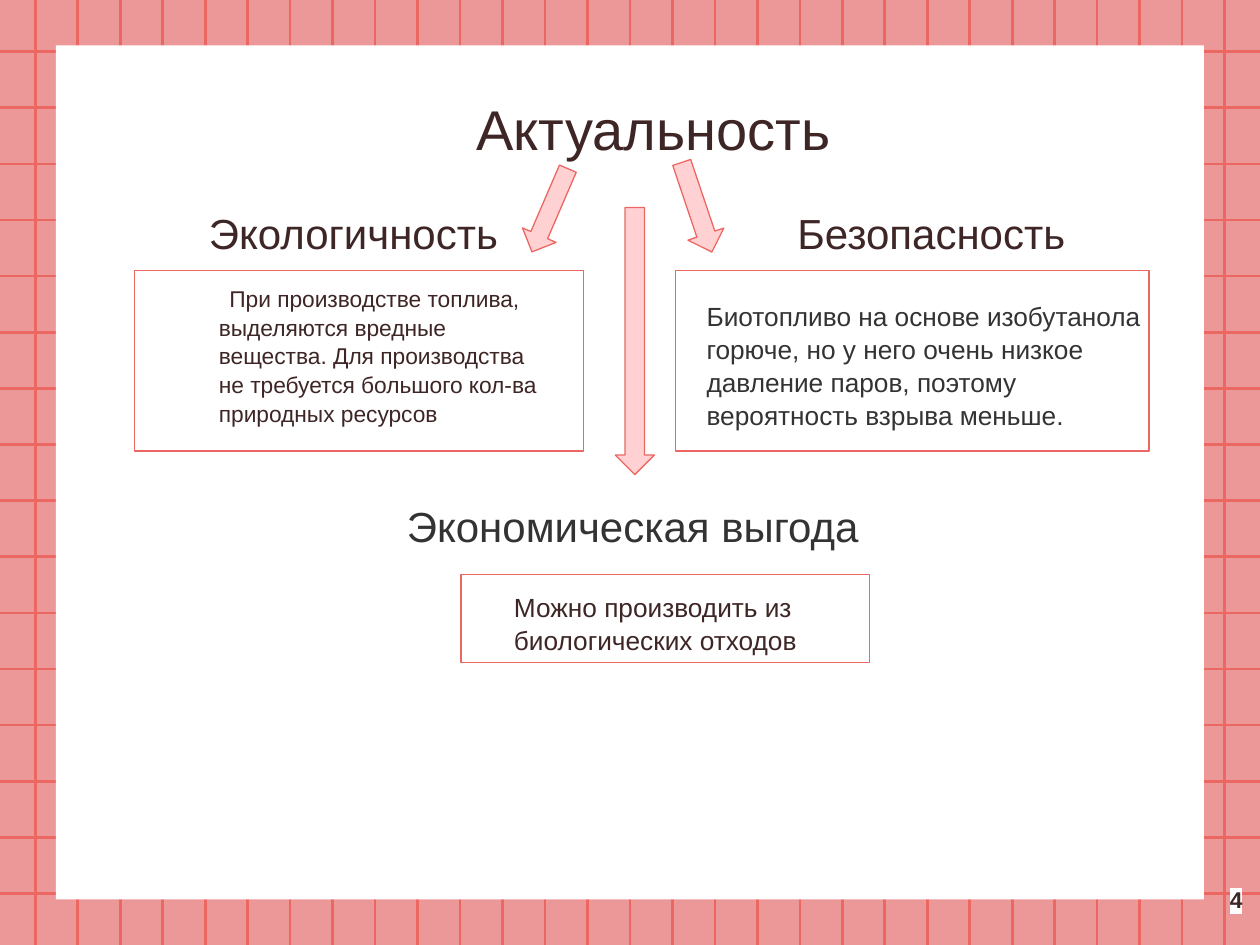
from pptx import Presentation
from pptx.dml.color import RGBColor
from pptx.enum import shapes, text
from pptx.oxml import parse_xml
from pptx.oxml.ns import nsdecls
from pptx.util import Pt

WIDTH, HEIGHT = 720, 540
FONT = "Arial"
COLORS = {
    "background": "ED9898",
    "accent": "EC6762",
    "panel": "FFFFFF",
    "arrow": "FFD1D3",
    "brown": "3E2626",
    "gray": "333333",
}
GRID_ROWS, ROW_START, ROW_STEP = 16, 29.5, 32.07
GRID_COLUMNS, COLUMN_START, COLUMN_STEP = 29, 20.2, 24.27
KIND = shapes.MSO_SHAPE
ALIGN = text.PP_ALIGN
BOTTOM = text.MSO_ANCHOR.BOTTOM


def color(name):
    return RGBColor.from_string(COLORS[name])


def add_grid_line(slide, x1, y1, x2, y2):
    line = slide.shapes.add_connector(
        shapes.MSO_CONNECTOR.STRAIGHT, Pt(x1), Pt(y1), Pt(x2), Pt(y2))
    line.line.color.rgb = color("accent")
    line.line.width = Pt(1.5)
    line._element.spPr.append(parse_xml(f"<a:effectLst {nsdecls('a')}/>"))


def add_grid(slide):
    for row in range(GRID_ROWS):
        y = ROW_START + row * ROW_STEP
        add_grid_line(slide, 0, y, WIDTH, y)
    for column in range(GRID_COLUMNS):
        x = COLUMN_START + column * COLUMN_STEP
        add_grid_line(slide, x, 0, x, HEIGHT)


def add_figure(slide, kind, box, fill=None, outline="accent", rotation=0):
    figure = slide.shapes.add_shape(kind, *map(Pt, box))
    figure.shadow.inherit = False
    figure.rotation = rotation
    if fill:
        figure.fill.solid()
        figure.fill.fore_color.rgb = color(fill)
    else:
        figure.fill.background()
    if outline:
        figure.line.color.rgb = color(outline)
        figure.line.width = Pt(0.75)
    else:
        figure.line.fill.background()


def add_text(slide, box, wording, size, ink="brown", align=ALIGN.LEFT,
             anchor=text.MSO_ANCHOR.TOP, spacing=1.0, margin=0, indent=0,
             bold=False, highlight=None):
    """Margin is the left paragraph margin, indent that of its first line."""
    frame = slide.shapes.add_textbox(*map(Pt, box)).text_frame
    frame.word_wrap = True
    frame.vertical_anchor = anchor
    frame.margin_left = frame.margin_right = Pt(7.2)
    frame.margin_top = frame.margin_bottom = Pt(7.2)
    paragraph = frame.paragraphs[0]
    paragraph.alignment = align
    paragraph.line_spacing = spacing
    if margin or indent:
        properties = paragraph._p.get_or_add_pPr()
        properties.set("marL", str(Pt(margin)))
        properties.set("indent", str(Pt(indent)))
    run = paragraph.add_run()
    run.text = wording
    run.font.name = FONT
    run.font.size = Pt(size)
    run.font.bold = bold
    run.font.color.rgb = color(ink)
    if highlight:
        ink_fill = run._r.rPr.find("{*}solidFill")
        ink_fill.addnext(parse_xml(
            f"<a:highlight {nsdecls('a')}>"
            f'<a:srgbClr val="{COLORS[highlight]}"/></a:highlight>'))


def add_arrow(slide, box, rotation=0):
    add_figure(slide, KIND.DOWN_ARROW, box, fill="arrow", rotation=rotation)


def main():
    deck = Presentation()
    deck.slide_width, deck.slide_height = Pt(WIDTH), Pt(HEIGHT)
    slide = deck.slides.add_slide(deck.slide_layouts[6])
    slide.background.fill.solid()
    slide.background.fill.fore_color.rgb = color("background")

    add_grid(slide)
    add_figure(slide, KIND.RECTANGLE, (32, 26, 656, 488), "panel", None)

    add_text(slide, (57, 47, 607, 60), "Актуальность", 32,
             align=ALIGN.CENTER, margin=26)
    add_text(slide, (79, 122.4, 246, 32.4), "Экологичность", 24,
             align=ALIGN.CENTER, anchor=BOTTOM)
    add_text(slide, (448.5, 104.4, 181.5, 50.4), "Безопасность", 24,
             anchor=BOTTOM)
    add_text(slide, (225.4, 263.5, 404.6, 58.3), "Экономическая выгода", 24,
             ink="gray", anchor=BOTTOM)

    add_text(slide, (82, 154.8, 240.5, 103),
             "При производстве топлива, выделяются вредные вещества. "
             "Для производства не требуется большого кол-ва природных "
             "ресурсов", 13, spacing=1.05, margin=36, indent=6)
    add_text(slide, (396.7, 163.4, 270.7, 108.7),
             "Биотопливо на основе изобутанола горюче, но у него очень "
             "низкое давление паров, поэтому вероятность взрыва меньше.",
             15, ink="gray", spacing=1.05)
    add_text(slide, (286.6, 329.8, 223.9, 58.3),
             "Можно производить из биологических отходов", 15, spacing=1.05)
    add_text(slide, (674, 499, 43, 41), "4", 13, align=ALIGN.RIGHT,
             bold=True, highlight="panel")

    for frame in ((77, 154.8, 256.3, 103), (386, 154.8, 270.7, 103),
                  (263.5, 328.3, 233.3, 50.4)):
        add_figure(slide, KIND.RECTANGLE, frame)

    add_arrow(slide, (303.8, 94.3, 20.9, 51.8), 23.3)
    add_arrow(slide, (387.4, 91.4, 21.6, 54), 341.4)
    add_arrow(slide, (351.6, 118.6, 22.3, 152.6))

    deck.save("out.pptx")


if __name__ == "__main__":
    main()
